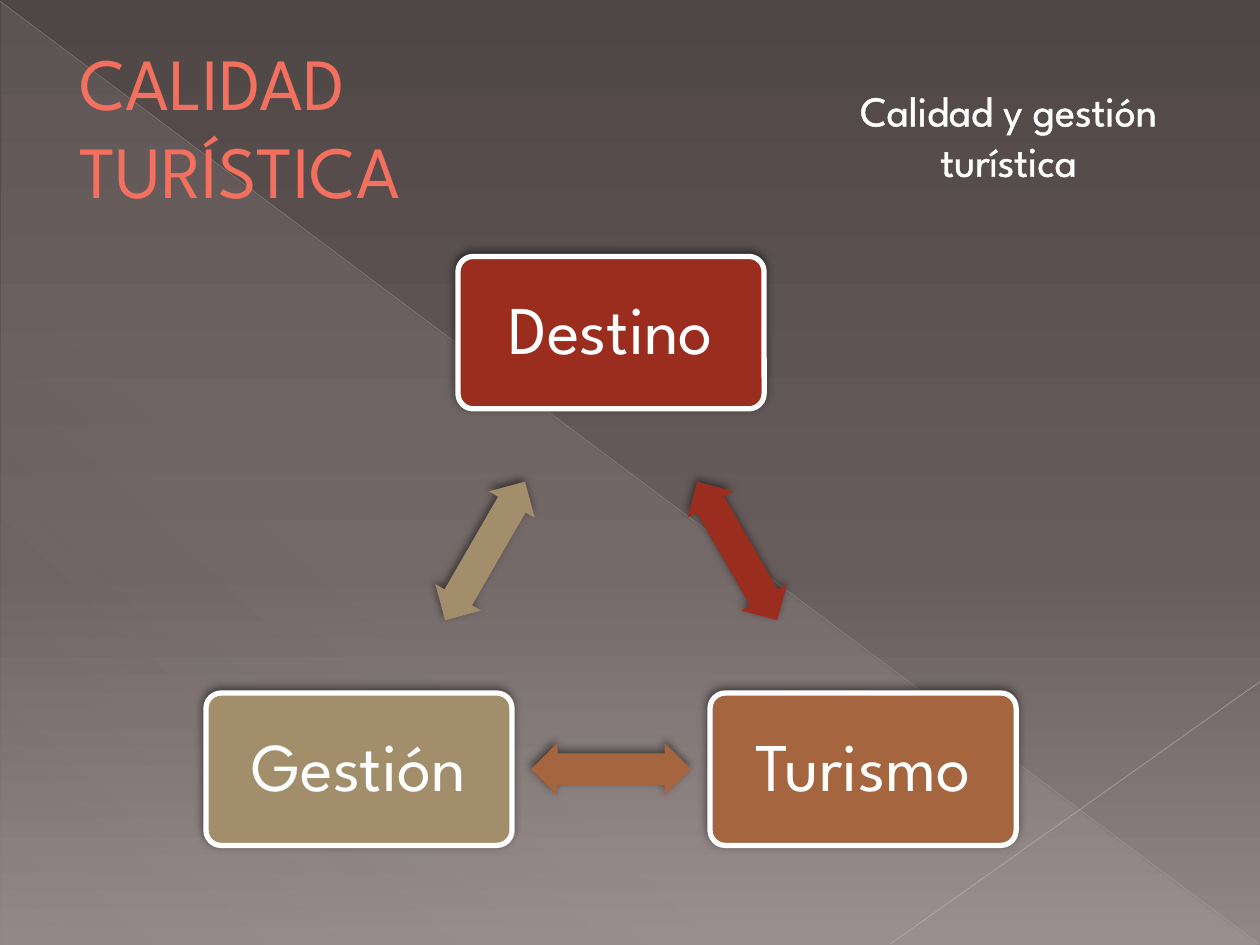
from math import cos, radians, sin

from lxml import etree
from pptx import Presentation
from pptx.dml.color import RGBColor
from pptx.enum.shapes import MSO_CONNECTOR, MSO_SHAPE
from pptx.enum.text import MSO_ANCHOR, MSO_AUTO_SIZE, PP_ALIGN
from pptx.oxml import parse_xml
from pptx.oxml.ns import nsdecls, qn
from pptx.util import Inches, Pt

FONT = "League Spartan"
WHITE = RGBColor(0xFF, 0xFF, 0xFF)
CORAL = RGBColor(0xF4, 0x70, 0x5E)
DARK_RED = RGBColor(0x92, 0x32, 0x10)
RED = RGBColor(0x9B, 0x2D, 0x1F)
BROWN = RGBColor(0xA4, 0x65, 0x3F)
SAND = RGBColor(0xA2, 0x8E, 0x6A)
BG_TOP = RGBColor(0x4F, 0x46, 0x46)
BG_MID = RGBColor(0x68, 0x5D, 0x5D)
BG_BOTTOM = RGBColor(0x92, 0x87, 0x87)
IVORY = RGBColor(0xE9, 0xE5, 0xDC)
LINE_LONG = RGBColor(0xC1, 0xBE, 0xBE)
LINE_SHORT = RGBColor(0xC7, 0xC5, 0xC5)

NODES = [("Destino", RED), ("Turismo", BROWN), ("Gestión", SAND)]


def set_alpha(color_el, percent):
    etree.SubElement(color_el, qn("a:alpha")).set("val", str(percent * 1000))


def set_gradient(fill, root, stops, angle):
    """Fill with (position, colour, opacity) stops; angle runs clockwise."""
    fill.gradient()
    fill.gradient_angle = 360 - angle
    gs_lst = next(root.iter(qn("a:gsLst")))
    for gs in list(gs_lst):
        gs_lst.remove(gs)
    for pos, color, opacity in stops:
        gs = etree.SubElement(gs_lst, qn("a:gs"), pos=str(pos * 1000))
        clr = etree.SubElement(gs, qn("a:srgbClr"), val=str(color))
        if opacity < 100:
            set_alpha(clr, opacity)


def add_shadow(sp):
    sp._element.spPr.append(parse_xml(
        f'<a:effectLst {nsdecls("a")}><a:outerShdw blurRad="{Pt(5)}" '
        f'dist="{Pt(2)}" dir="{245 * 60000}" algn="ctr" rotWithShape="0">'
        '<a:srgbClr val="000000"><a:alpha val="50000"/></a:srgbClr>'
        '</a:outerShdw></a:effectLst>'))


def write_text(sp, text, size, color=WHITE, align=PP_ALIGN.CENTER,
               anchor=MSO_ANCHOR.MIDDLE, spacing=None, inset=None,
               outline=None):
    tf = sp.text_frame
    tf.word_wrap = True
    tf.auto_size = MSO_AUTO_SIZE.NONE
    tf.vertical_anchor = anchor
    if inset is not None:
        tf.margin_left = tf.margin_right = Inches(inset)
        tf.margin_top = tf.margin_bottom = Inches(inset)
    p = tf.paragraphs[0]
    p.alignment = align
    p.line_spacing = spacing
    r = p.add_run()
    r.text = text
    r.font.name, r.font.size = FONT, Pt(size)
    r.font.color.rgb = color
    if outline:
        line_color, width = outline
        r.font._element.insert(0, parse_xml(
            f'<a:ln {nsdecls("a")} w="{Pt(width)}"><a:solidFill>'
            f'<a:srgbClr val="{line_color}"/></a:solidFill></a:ln>'))
    return p


def add_line(s, start, end, color, width, opacity):
    cx = s.shapes.add_connector(MSO_CONNECTOR.STRAIGHT,
                                *map(Inches, start + end))
    cx.line.color.rgb = color
    cx.line.width = Pt(width)
    sp_pr = cx._element.spPr
    set_alpha(next(sp_pr.iter(qn("a:srgbClr"))), opacity)
    etree.SubElement(sp_pr, qn("a:effectLst"))


def add_block(s, kind, center, size, color, adjustments):
    (x, y), (w, h) = center, size
    sp = s.shapes.add_shape(kind, Inches(x - w / 2), Inches(y - h / 2),
                            Inches(w), Inches(h))
    for i, value in enumerate(adjustments):
        sp.adjustments[i] = value
    sp.fill.solid()
    sp.fill.fore_color.rgb = color
    sp.line.fill.background()
    add_shadow(sp)
    return sp


def draw_background(s, width, height):
    set_gradient(s.background.fill, s._element,
                 [(0, BG_TOP, 100), (60, BG_MID, 100), (100, BG_BOTTOM, 100)],
                 90)
    # Pale lower-left triangle
    sp = s.shapes.add_shape(MSO_SHAPE.RIGHT_TRIANGLE, Inches(0.01),
                            Inches(0.02), Inches(width - 0.02),
                            Inches(height - 0.02))
    sp.shadow.inherit = False
    sp.line.fill.background()
    set_gradient(sp.fill, sp._element,
                 [(0, IVORY, 10), (70, IVORY, 8), (100, IVORY, 1)], 133)
    # Thin diagonals
    add_line(s, (0, 0.01), (width - 0.01, height - 0.01), LINE_LONG, 0.39, 35)
    add_line(s, (width, 5.41), (7.07, height - 0.01), LINE_SHORT, 0.47, 45)


def draw_title(s, left, top, width, height):
    title = s.shapes.title
    title.left, title.top = Inches(left), Inches(top)
    title.width, title.height = Inches(width), Inches(height)
    p = write_text(title, "CALIDAD TURÍSTICA", 42, color=CORAL,
                   align=PP_ALIGN.LEFT, outline=(DARK_RED, 0.5))
    p._p.get_or_add_pPr().set("marL", str(Inches(0.53)))


def draw_subtitle(s, left, top, width, height):
    box = s.shapes.add_textbox(Inches(left), Inches(top),
                               Inches(width), Inches(height))
    write_text(box, "Calidad y gestión turística", 24,
               anchor=MSO_ANCHOR.TOP, outline=(WHITE, 1.45))


def draw_cycle(s, cx, cy, radius):
    """Nodes on a circle, clockwise from the top, with arrows between them."""
    step = 360 / len(NODES)
    centers = [(cx + radius * sin(radians(i * step)),
                cy - radius * cos(radians(i * step)))
               for i in range(len(NODES))]
    for i, (name, color) in enumerate(NODES):
        (x1, y1), (x2, y2) = centers[i], centers[(i + 1) % len(NODES)]
        # Node
        node = add_block(s, MSO_SHAPE.ROUNDED_RECTANGLE, (x1, y1),
                         (2.43, 1.21), color, [0.1])
        node.line.color.rgb = WHITE
        node.line.width = Pt(3)
        write_text(node, name, 39, spacing=0.9, inset=0.16)
        # Arrow to the next node
        arrow = add_block(s, MSO_SHAPE.LEFT_RIGHT_ARROW,
                          ((x1 + x2) / 2, (y1 + y2) / 2),
                          (1.27, 0.42), color, [0.6, 0.5])
        arrow.rotation = step / 2 + i * step


def main():
    prs = Presentation()
    prs.slide_width, prs.slide_height = Inches(10), Inches(7.5)
    s = prs.slides.add_slide(prs.slide_layouts[5])
    draw_background(s, 10, 7.5)
    draw_title(s, 0, 0.23, 4.34, 1.53)
    draw_subtitle(s, 6.48, 0.62, 3.05, 1.21)
    draw_cycle(s, 4.85, 4.95, 2.31)
    # Keep the title above the backdrop
    s.shapes._spTree.append(s.shapes.title._element)
    prs.save("out.pptx")


if __name__ == "__main__":
    main()
